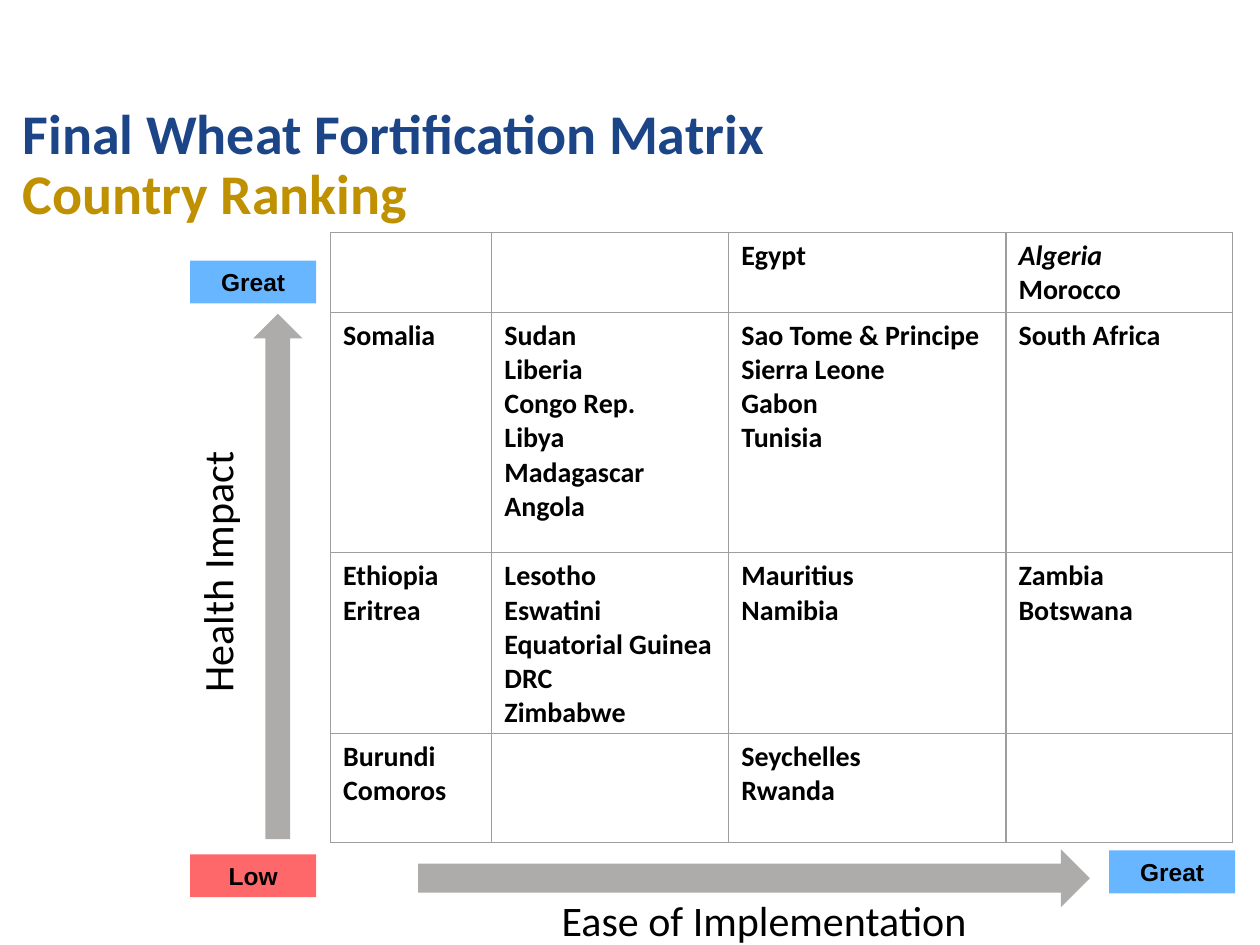
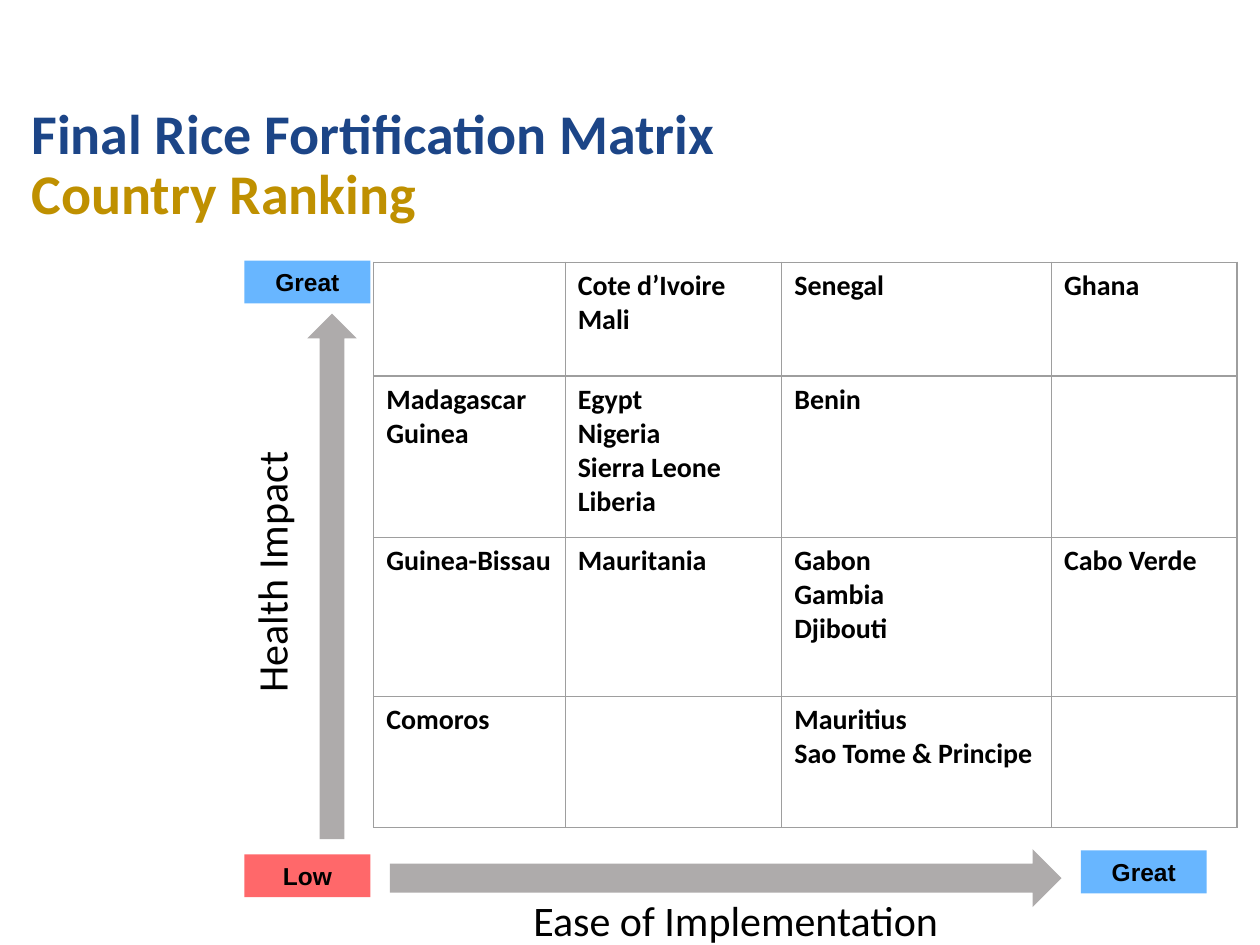
"""Build the wheat and rice fortification country ranking slides."""
from lxml.etree import SubElement
from pptx import Presentation
from pptx.dml.color import RGBColor
from pptx.enum.shapes import MSO_SHAPE as Shape
from pptx.enum.text import MSO_ANCHOR as Anchor, PP_ALIGN as Align
from pptx.oxml.ns import qn
from pptx.util import Pt

NAVY = RGBColor(0x1C, 0x45, 0x87)
GOLD = RGBColor(0xBF, 0x90, 0x00)
GREY = RGBColor(0xAE, 0xAB, 0xAB)
BLUE = RGBColor(0x68, 0xB6, 0xFF)
RED = RGBColor(0xFF, 0x68, 0x6A)
BLACK = RGBColor(0, 0, 0)
BORDER = RGBColor(0x9E, 0x9E, 0x9E)
TITLE_ONLY = 5

WHEAT = [
    ["", "", "Egypt", "Algeria\nMorocco"],
    ["Somalia", "Sudan\nLiberia\nCongo Rep.\nLibya\nMadagascar\nAngola",
     "Sao Tome & Principe\nSierra Leone\nGabon\nTunisia", "South Africa"],
    ["Ethiopia\nEritrea", "Lesotho\nEswatini\nEquatorial Guinea\nDRC\nZimbabwe",
     "Mauritius\nNamibia", "Zambia\nBotswana"],
    ["Burundi\nComoros", "", "Seychelles\nRwanda", ""],
]
RICE = [
    ["", "Cote d’Ivoire\nMali", "Senegal", "Ghana"],
    ["Madagascar\nGuinea", "Egypt\nNigeria\nSierra Leone\nLiberia", "Benin", ""],
    ["Guinea-Bissau", "Mauritania", "Gabon\nGambia\nDjibouti", "Cabo Verde"],
    ["Comoros", "", "Mauritius\nSao Tome & Principe", ""],
]


class MatrixDeck:
    """Holds the shared style and the current slide."""

    def __init__(self):
        self.deck = Presentation()
        self.deck.slide_width, self.deck.slide_height = Pt(720), Pt(540)
        self.slide = None

    def style(self, para, size, color=BLACK, bold=False, name="Calibri"):
        for span in para.runs:
            font = span.font
            font.name, font.size, font.bold = name, Pt(size), bold
            font.color.rgb = color

    def title(self, text, left):
        self.slide = self.deck.slides.add_slide(self.deck.slide_layouts[TITLE_ONLY])
        box = self.slide.shapes.title
        box.left, box.top, box.width, box.height = Pt(left), Pt(62.6), Pt(620.6), Pt(64.8)
        frame = box.text_frame
        frame.text = text
        frame.vertical_anchor = Anchor.MIDDLE
        for para, color in zip(frame.paragraphs, (NAVY, GOLD)):
            para.alignment, para.line_spacing = Align.LEFT, 0.9
            self.style(para, 32, color, bold=True)

    def block(self, kind, left, top, width, height, color):
        shape = self.slide.shapes.add_shape(kind, Pt(left), Pt(top), Pt(width), Pt(height))
        shape.shadow.inherit = False
        shape.fill.solid()
        shape.fill.fore_color.rgb = color
        shape.line.fill.background()
        return shape

    def tag(self, text, left, top, color):
        frame = self.block(Shape.RECTANGLE, left, top, 72, 24.5, color).text_frame
        frame.text = text
        para = frame.paragraphs[0]
        para.alignment = Align.CENTER
        self.style(para, 14, bold=True, name="Arial")

    def axis_label(self, text, left, top, width, indent, rotation=0):
        box = self.slide.shapes.add_textbox(Pt(left), Pt(top), Pt(width), Pt(36))
        box.rotation = rotation
        frame = box.text_frame
        frame.word_wrap = True
        frame.text = text
        para = frame.paragraphs[0]
        para.alignment = Align.CENTER
        para._p.get_or_add_pPr().set("marL", str(Pt(indent)))
        self.style(para, 24)

    def axes(self, impact_left, ease_left):
        self.block(Shape.RIGHT_ARROW, ease_left, 485.3, 383.8, 33.1, GREY)
        self.block(Shape.UP_ARROW, impact_left + 36, 179.3, 28.1, 300.2, GREY)
        self.tag("Low", impact_left, 488.2, RED)
        self.tag("Great", ease_left + 394.8, 486, BLUE)
        self.tag("Great", impact_left, 149, BLUE)
        self.axis_label("Health Impact", impact_left - 123.8, 344.9, 277.9, 72, 270)
        self.axis_label("Ease of Implementation", ease_left - 72, 507.6, 395.3, 144)

    def border(self, cell):
        props = cell._tc.get_or_add_tcPr()
        for side in ("lnL", "lnR", "lnT", "lnB"):
            line = SubElement(props, qn(f"a:{side}"), w=str(Pt(0.75)))
            fill = SubElement(line, qn("a:solidFill"))
            SubElement(fill, qn("a:srgbClr"), val=str(BORDER))

    def matrix(self, rows, left, top, widths, heights):
        frame = self.slide.shapes.add_table(
            len(rows), len(widths), Pt(left), Pt(top), Pt(sum(widths)), Pt(sum(heights)))
        table = frame.table
        table.first_row = table.horz_banding = False
        for column, width in zip(table.columns, widths):
            column.width = Pt(width)
        for row, height, texts in zip(table.rows, heights, rows):
            row.height = Pt(height)
            for cell, text in zip(row.cells, texts):
                cell.text = text
                self.border(cell)
                cell.fill.background()
                for para in cell.text_frame.paragraphs:
                    self.style(para, 16, bold=True)
        return table


def main():
    show = MatrixDeck()
    show.title("Final Wheat Fortification Matrix\nCountry Ranking", 5.8)
    show.axes(108.7, 239)
    table = show.matrix(WHEAT, 188.9, 132.8, [92.2, 135.4, 158.4, 129.2],
                        [43.9, 137.5, 100.1, 62.6])
    algeria = table.cell(0, 3).text_frame.paragraphs[0]
    algeria.runs[0].font.italic = True

    show.title("Final Rice Fortification Matrix\nCountry Ranking", 10.8)
    show.axes(139.7, 222.8)
    show.matrix(RICE, 213.6, 149.8, [109.4, 123.8, 154.1, 106],
                [65.1, 92.2, 90.7, 74.9])
    show.deck.save("out.pptx")


if __name__ == "__main__":
    main()
